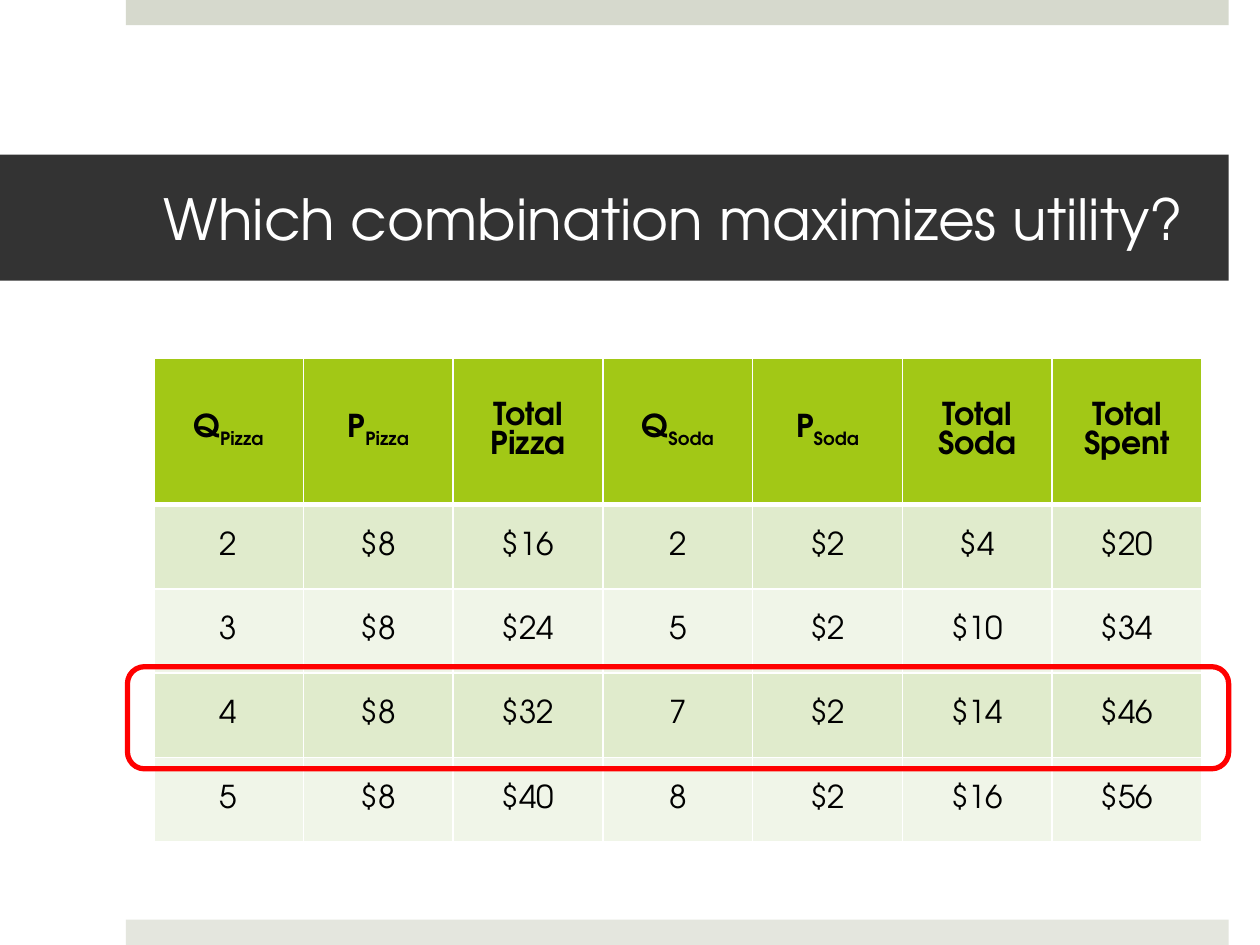
from lxml.etree import SubElement
from pptx import Presentation
from pptx.dml.color import RGBColor
from pptx.enum.shapes import MSO_SHAPE as Shape
from pptx.enum.text import MSO_ANCHOR as Anchor, PP_ALIGN as Align
from pptx.oxml.ns import qn
from pptx.util import Cm, Pt

TITLE = "Which combination maximizes utility?"
HEADERS = [
    ("Q", "Pizza"), ("P", "Pizza"), ("Total Pizza", ""),
    ("Q", "Soda"), ("P", "Soda"), ("Total Soda", ""), ("Total Spent", ""),
]
ROWS = [
    ("2", "$8", "$16", "2", "$2", "$4", "$20"),
    ("3", "$8", "$24", "5", "$2", "$10", "$34"),
    ("4", "$8", "$32", "7", "$2", "$14", "$46"),
    ("5", "$8", "$40", "8", "$2", "$16", "$56"),
]
FONT = "TeX Gyre Adventor"
COLORS = {
    "top": "D6D9CD", "bottom": "E4E6DE", "title": "333333", "header": "A2C816",
    "odd": "E0EBCC", "even": "F0F5E8", "white": "FFFFFF", "text": "000000",
    "highlight": "FF0000",
}
SLIDE_W, SLIDE_H = 25.4, 19.05
BAR_LEFT, BAR_W, BAR_H = 2.54, 22.23, 0.51
TABLE_LEFT, TABLE_TOP, TABLE_W = 3.1, 7.22, 21.13
HEADER_H, ROW_H = 2.95, 1.7


def rgb(name):
    return RGBColor.from_string(COLORS[name])


def add_box(slide, kind, left, top, width, height, fill=None):
    sp = slide.shapes.add_shape(kind, Cm(left), Cm(top), Cm(width), Cm(height))
    sp.shadow.inherit = False
    if fill:
        sp.fill.solid()
        sp.fill.fore_color.rgb = rgb(fill)
    else:
        sp.fill.background()
    sp.line.fill.background()
    return sp


def add_run(p, text, size, color, bold=False, baseline=0):
    r = p.add_run()
    r.text = text
    r.font.name = FONT
    r.font.size = Pt(size)
    r.font.bold = bold
    r.font.color.rgb = rgb(color)
    if baseline:
        r.font._element.set("baseline", str(baseline * 1000))


def set_borders(cell, widths):
    tc_pr = cell._tc.get_or_add_tcPr()
    for i, (side, width) in enumerate(widths.items()):
        ln = tc_pr.makeelement(qn("a:" + side), {"w": str(Pt(width))})
        fill = SubElement(ln, qn("a:solidFill"))
        SubElement(fill, qn("a:srgbClr"), val=COLORS["white"])
        tc_pr.insert(i, ln)


def fill_cell(cell, runs, fill, bold, top, bottom):
    cell.fill.solid()
    cell.fill.fore_color.rgb = rgb(fill)
    cell.vertical_anchor = Anchor.MIDDLE
    cell.margin_left = cell.margin_right = Cm(0.53)
    cell.margin_top = cell.margin_bottom = Cm(0.13)
    p = cell.text_frame.paragraphs[0]
    p.alignment = Align.CENTER
    for text, baseline in runs:
        add_run(p, text, 18, "text", bold, baseline)
    set_borders(cell, {"lnL": 1, "lnR": 1, "lnT": top, "lnB": bottom})


def add_title(slide):
    sp = add_box(slide, Shape.RECTANGLE, 0, 3.12, 24.77, 2.54, "title")
    tf = sp.text_frame
    tf.word_wrap = True
    tf.vertical_anchor = Anchor.MIDDLE
    tf.margin_left, tf.margin_right = Cm(3.3), Cm(0.76)
    tf.margin_top = tf.margin_bottom = Cm(0.13)
    p = tf.paragraphs[0]
    p.alignment = Align.LEFT
    add_run(p, TITLE, 32.4, "white")


def add_budget_table(slide):
    height = HEADER_H + ROW_H * len(ROWS)
    table = slide.shapes.add_table(
        len(ROWS) + 1, len(HEADERS),
        Cm(TABLE_LEFT), Cm(TABLE_TOP), Cm(TABLE_W), Cm(height)).table
    for col in table.columns:
        col.width = Cm(TABLE_W / len(HEADERS))
    for i, row in enumerate(table.rows):
        row.height = Cm(ROW_H if i else HEADER_H)
    for j, (label, sub) in enumerate(HEADERS):
        runs = [(label, 0)] + ([(sub, -25)] if sub else [])
        fill_cell(table.cell(0, j), runs, "header", True, 1, 3)
    for i, values in enumerate(ROWS, 1):
        for j, value in enumerate(values):
            fill_cell(table.cell(i, j), [(value, 0)], "odd" if i % 2 else "even",
                      False, 3 if i == 1 else 1, 1)


def main():
    prs = Presentation()
    prs.slide_width, prs.slide_height = Cm(SLIDE_W), Cm(SLIDE_H)
    slide = prs.slides.add_slide(prs.slide_layouts[6])
    for top, fill in ((0, "top"), (SLIDE_H - BAR_H, "bottom")):
        add_box(slide, Shape.RECTANGLE, BAR_LEFT, top, BAR_W, BAR_H, fill)
    add_title(slide)
    add_budget_table(slide)
    frame = add_box(slide, Shape.ROUNDED_RECTANGLE, 2.57, 13.44, 22.2, 2.06)
    frame.line.color.rgb = rgb("highlight")
    frame.line.width = Pt(3)
    prs.save("out.pptx")


if __name__ == "__main__":
    main()
